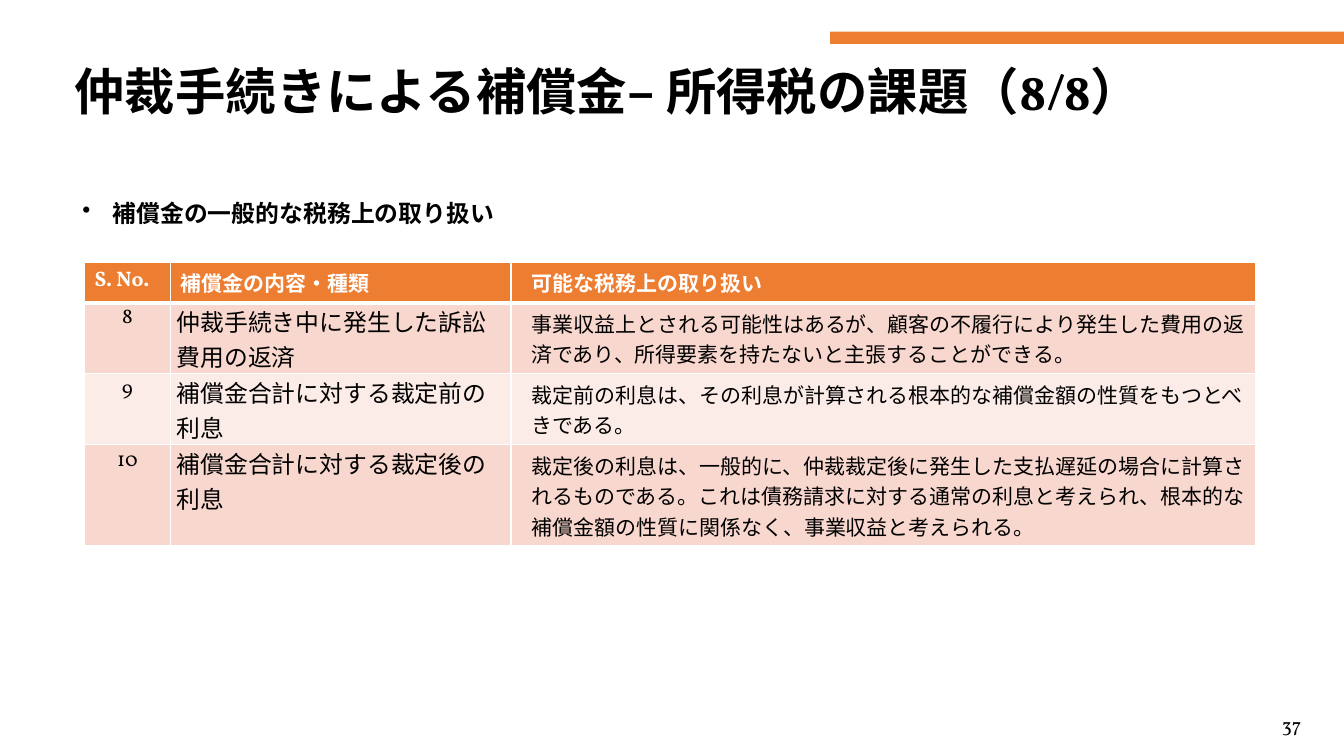
from dataclasses import dataclass

from lxml import etree
from pptx import Presentation
from pptx.dml.color import RGBColor
from pptx.enum.shapes import MSO_SHAPE
from pptx.enum.text import MSO_ANCHOR, PP_ALIGN
from pptx.oxml.ns import qn
from pptx.util import Cm, Pt

RECTANGLE = MSO_SHAPE.RECTANGLE
TOP, MIDDLE = MSO_ANCHOR.TOP, MSO_ANCHOR.MIDDLE
LEFT, CENTER = PP_ALIGN.LEFT, PP_ALIGN.CENTER


@dataclass(frozen=True)
class Theme:
    font: str = "Vollkorn"
    black: RGBColor = RGBColor(0, 0, 0)
    white: RGBColor = RGBColor(255, 255, 255)
    accent: RGBColor = RGBColor(0xED, 0x7D, 0x31)
    bands: tuple = (RGBColor(0xF8, 0xD7, 0xCE), RGBColor(0xFC, 0xEC, 0xE8))
    title: Pt = Pt(36)
    large: Pt = Pt(17)
    body: Pt = Pt(15)
    number: Pt = Pt(14)


theme = Theme()


def write(frame, text, size, color=theme.black, bold=False, align=LEFT, margin=0, hanging=0):
    """Fill the first paragraph of a text frame and return it."""
    paragraph = frame.paragraphs[0]
    paragraph.text = text
    paragraph.alignment = align
    font = paragraph.font
    font.name, font.size, font.bold = theme.font, size, bold
    font.color.rgb = color
    properties = paragraph._p.get_or_add_pPr()
    properties.set("marL", str(Cm(margin)))
    properties.set("indent", str(-Cm(hanging)))
    return paragraph


def add_box(page, left, top, width, height, anchor=TOP):
    """Add a wrapping text box, measured in centimetres, and return its frame."""
    box = page.shapes.add_textbox(Cm(left), Cm(top), Cm(width), Cm(height))
    frame = box.text_frame
    frame.word_wrap = True
    frame.vertical_anchor = anchor
    return frame


deck = Presentation()
deck.slide_width, deck.slide_height = Cm(33.87), Cm(19.05)
page = deck.slides.add_slide(deck.slide_layouts[6])

# Title
title = add_box(page, 1.63, 0.97, 29.2, 2.82, MIDDLE)
paragraph = write(title, "仲裁手続きによる補償金– 所得税の課題（8/8）", theme.title, bold=True)
paragraph.line_spacing = 0.9

# Bulleted subheading
subheading = add_box(page, 1.83, 4.88, 30.35, 1.3)
paragraph = write(subheading, "補償金の一般的な税務上の取り扱い", theme.large, bold=True, margin=0.76, hanging=0.76)
bullet = etree.SubElement(paragraph._p.get_or_add_pPr(), qn("a:buChar"))
bullet.set("char", "•")
# The bullet precedes the default run properties in the schema
paragraph._p.pPr.insert(0, bullet)

# Accent bar
bar = page.shapes.add_shape(RECTANGLE, Cm(20.92), Cm(0.8), Cm(12.95), Cm(0.31))
bar.shadow.inherit = False
bar.fill.solid()
bar.fill.fore_color.rgb = theme.accent
bar.line.fill.background()

# Page number
number = add_box(page, 32.18, 17.96, 0.74, 0.86)
number.margin_left = number.margin_right = number.margin_top = number.margin_bottom = 0
write(number, "37", theme.number, align=CENTER).space_before = Pt(4.5)

# Table of treatments
rows = [
    ("S. No.", "補償金の内容・種類", "可能な税務上の取り扱い"),
    ("8", "仲裁手続き中に発生した訴訟費用の返済",
     "事業収益上とされる可能性はあるが、顧客の不履行により発生した費用の返済であり、"
     "所得要素を持たないと主張することができる。"),
    ("9", "補償金合計に対する裁定前の利息",
     "裁定前の利息は、その利息が計算される根本的な補償金額の性質をもつとべきである。"),
    ("10", "補償金合計に対する裁定後の利息",
     "裁定後の利息は、一般的に、仲裁裁定後に発生した支払遅延の場合に計算されるものである。"
     "これは債務請求に対する通常の利息と考えられ、根本的な補償金額の性質に関係なく、"
     "事業収益と考えられる。"),
]
column_widths = (2.16, 8.59, 18.75)
row_heights = (1.03, 1.79, 1.79, 2.54)
# Size, alignment and left margin of each body column
column_styles = (
    (theme.body, CENTER, 0),
    (theme.large, LEFT, 0.13),
    (theme.body, LEFT, 0.25),
)

table = page.shapes.add_table(
    len(rows), len(column_widths), Cm(2.13), Cm(6.6),
    Cm(sum(column_widths)), Cm(sum(row_heights)),
).table
for column, width in zip(table.columns, column_widths):
    column.width = Cm(width)
for row, height in zip(table.rows, row_heights):
    row.height = Cm(height)

for row_index, texts in enumerate(rows):
    header = row_index == 0
    for column_index, text in enumerate(texts):
        cell = table.cell(row_index, column_index)
        size, align, margin = column_styles[column_index]
        if header:
            write(cell.text_frame, text, theme.body, theme.white, True,
                  margin=margin if column_index == 2 else 0)
        else:
            write(cell.text_frame, text, size, align=align, margin=margin)
            if column_index < 2:
                cell.margin_left = cell.margin_right = cell.margin_top = Cm(0.03)
                cell.margin_bottom = 0

        # White rules, heavier between the header and the body
        for side in ("lnL", "lnR", "lnT", "lnB"):
            heavy = (row_index, side) in ((0, "lnB"), (1, "lnT"))
            line = etree.SubElement(cell._tc.get_or_add_tcPr(), qn(f"a:{side}"))
            line.set("w", str(Pt(3 if heavy else 1)))
            fill = etree.SubElement(line, qn("a:solidFill"))
            etree.SubElement(fill, qn("a:srgbClr")).set("val", str(theme.white))

        cell.fill.solid()
        cell.fill.fore_color.rgb = theme.accent if header else theme.bands[(row_index - 1) % 2]

deck.save("out.pptx")
